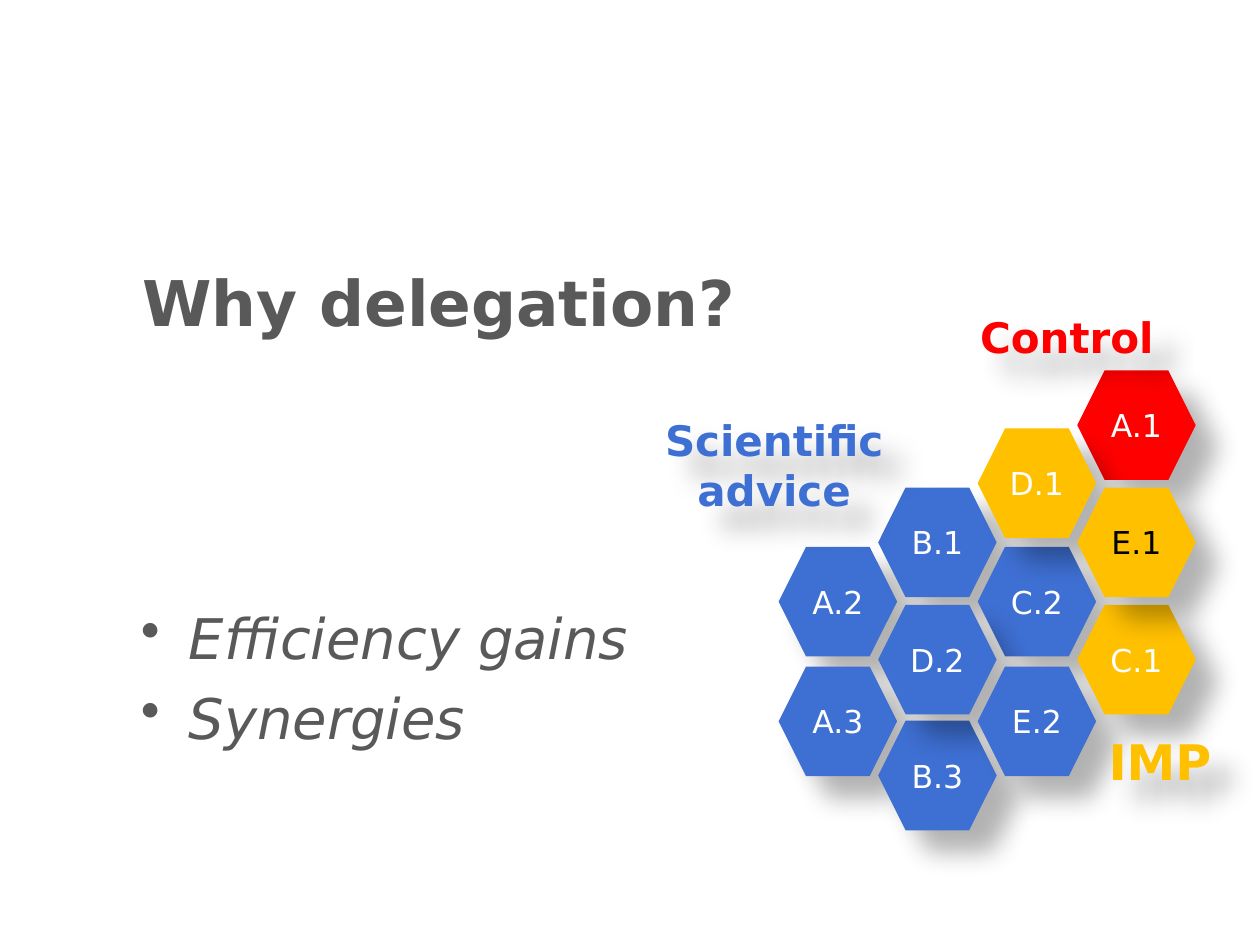
from lxml import etree
from pptx import Presentation
from pptx.dml.color import RGBColor
from pptx.enum.shapes import MSO_SHAPE as SHAPE
from pptx.enum.text import MSO_ANCHOR as ANCHOR, PP_ALIGN as ALIGN
from pptx.oxml.ns import qn
from pptx.util import Inches, Pt

BLUE, RED, YELLOW, GREY = "3E6FD2", "FF0000", "FFC000", "595959"
WHITE, BLACK = "FFFFFF", "000000"


def rgb(value):
    return RGBColor.from_string(value)


def child(parent, tag, **attrs):
    return etree.SubElement(parent, qn(tag), {k: str(v) for k, v in attrs.items()})


class Deck:
    font = "DejaVu Sans"
    hex_size = (0.94, 0.87)

    def __init__(self, width, height):
        self.prs = Presentation()
        self.prs.slide_width, self.prs.slide_height = Inches(width), Inches(height)
        self.s = self.prs.slides.add_slide(self.prs.slide_layouts[6])

    def add_text(self, p, text, color, **fmt):
        r = p.add_run()
        r.text = text
        for name, value in {"name": self.font, **fmt}.items():
            setattr(r.font, name, value)
        r.font.color.rgb = rgb(color)

    def shadow(self, sp):
        sp.shadow.inherit = False
        effects = sp._element.spPr.find(qn("a:effectLst"))
        outer = child(effects, "a:outerShdw", blurRad=Pt(15), dist=Pt(18),
                      dir=45 * 60000, algn="tl", rotWithShape=0)
        color = child(outer, "a:srgbClr", val=BLACK)
        child(color, "a:alpha", val=30000)

    def box(self, x, y, w, h):
        sp = self.s.shapes.add_textbox(*map(Inches, (x, y, w, h)))
        sp.text_frame.word_wrap = True
        return sp

    def title(self, text, *at):
        tf = self.box(*at).text_frame
        self.add_text(tf.paragraphs[0], text, GREY, size=Pt(36), bold=True)

    def bullets(self, items, *at):
        tf = self.box(*at).text_frame
        for i, text in enumerate(items):
            p = tf.add_paragraph() if i else tf.paragraphs[0]
            pPr = p._p.get_or_add_pPr()
            pPr.set("marL", str(Inches(0.38)))
            pPr.set("indent", str(Inches(-0.38)))
            child(child(pPr, "a:buClr"), "a:srgbClr", val=GREY)
            child(pPr, "a:buChar", char="•")
            if i:
                p.space_before = Pt(7.5)
            self.add_text(p, text, GREY, size=Pt(32), italic=True)

    def label(self, text, color, size, align, *at):
        sp = self.box(*at)
        self.shadow(sp)
        p = sp.text_frame.paragraphs[0]
        p.alignment = align
        self.add_text(p, text, color, size=Pt(size), bold=True)

    def hexagon(self, text, x, y, fill, color=WHITE):
        sp = self.s.shapes.add_shape(SHAPE.HEXAGON, *map(Inches, (x, y, *self.hex_size)))
        sp.fill.solid()
        sp.fill.fore_color.rgb = rgb(fill)
        sp.line.fill.background()
        self.shadow(sp)
        tf = sp.text_frame
        frame = {"margin_left": 0, "margin_right": 0, "margin_top": 0,
                 "margin_bottom": 0, "word_wrap": False,
                 "vertical_anchor": ANCHOR.MIDDLE}
        for name, value in frame.items():
            setattr(tf, name, value)
        p = tf.paragraphs[0]
        p.alignment = ALIGN.CENTER
        self.add_text(p, text, color, size=Pt(18))


# Honeycomb: columns at an equal step, rows half a cell apart
COL_LEFT, COL_STEP = 6.18, 0.79
ROW_TOPS = [2.94, 3.4, 3.87, 4.34, 4.8, 5.29, 5.72]
CELLS = [  # name, column, row, fill
    ("A.1", 3, 0, RED),
    ("A.2", 0, 3, BLUE), ("A.3", 0, 5, BLUE),
    ("B.1", 1, 2, BLUE), ("B.3", 1, 6, BLUE),
    ("C.2", 2, 3, BLUE), ("D.2", 1, 4, BLUE), ("E.2", 2, 5, BLUE),
    ("C.1", 3, 4, YELLOW), ("D.1", 2, 1, YELLOW), ("E.1", 3, 2, YELLOW),
]


def main():
    deck = Deck(10, 7.5)

    # Heading and arguments
    deck.bullets(["Efficiency gains", "Synergies"], 1.02, 4.74, 7.95, 2.4)
    deck.title("Why delegation?", 1.03, 2.04, 7.94, 1.13)

    # Honeycomb
    for name, col, row, fill in CELLS:
        color = BLACK if name == "E.1" else WHITE
        deck.hexagon(name, COL_LEFT + col * COL_STEP, ROW_TOPS[row], fill, color)

    # Group names
    deck.label("Scientific advice", BLUE, 24, ALIGN.CENTER, 5.08, 3.24, 2.13, 0.91)
    deck.label("Control", RED, 24, ALIGN.LEFT, 7.68, 2.42, 1.65, 0.5)
    deck.label("IMP", YELLOW, 28, ALIGN.LEFT, 8.7, 5.76, 1.1, 0.57)

    deck.prs.save("out.pptx")


if __name__ == "__main__":
    main()
